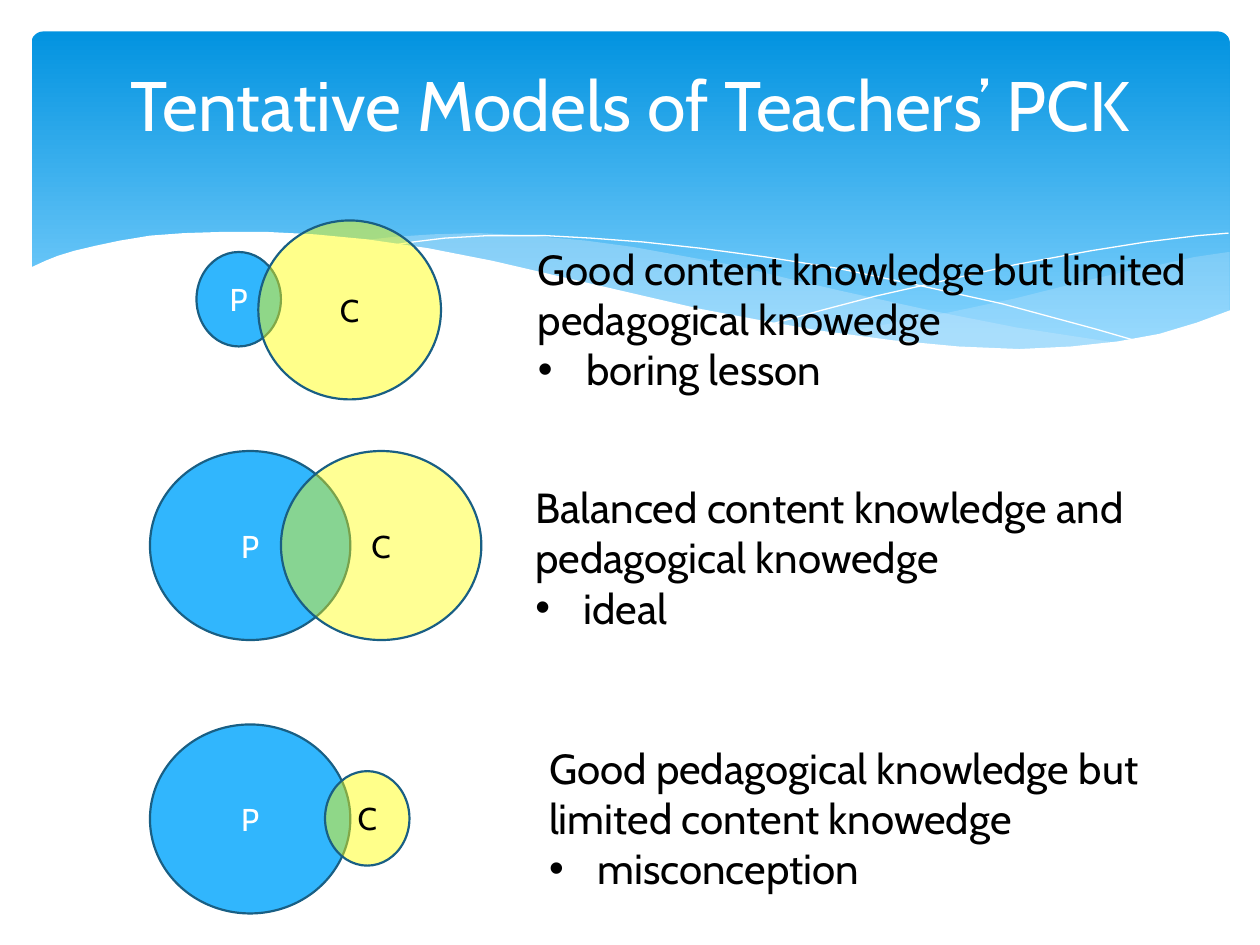
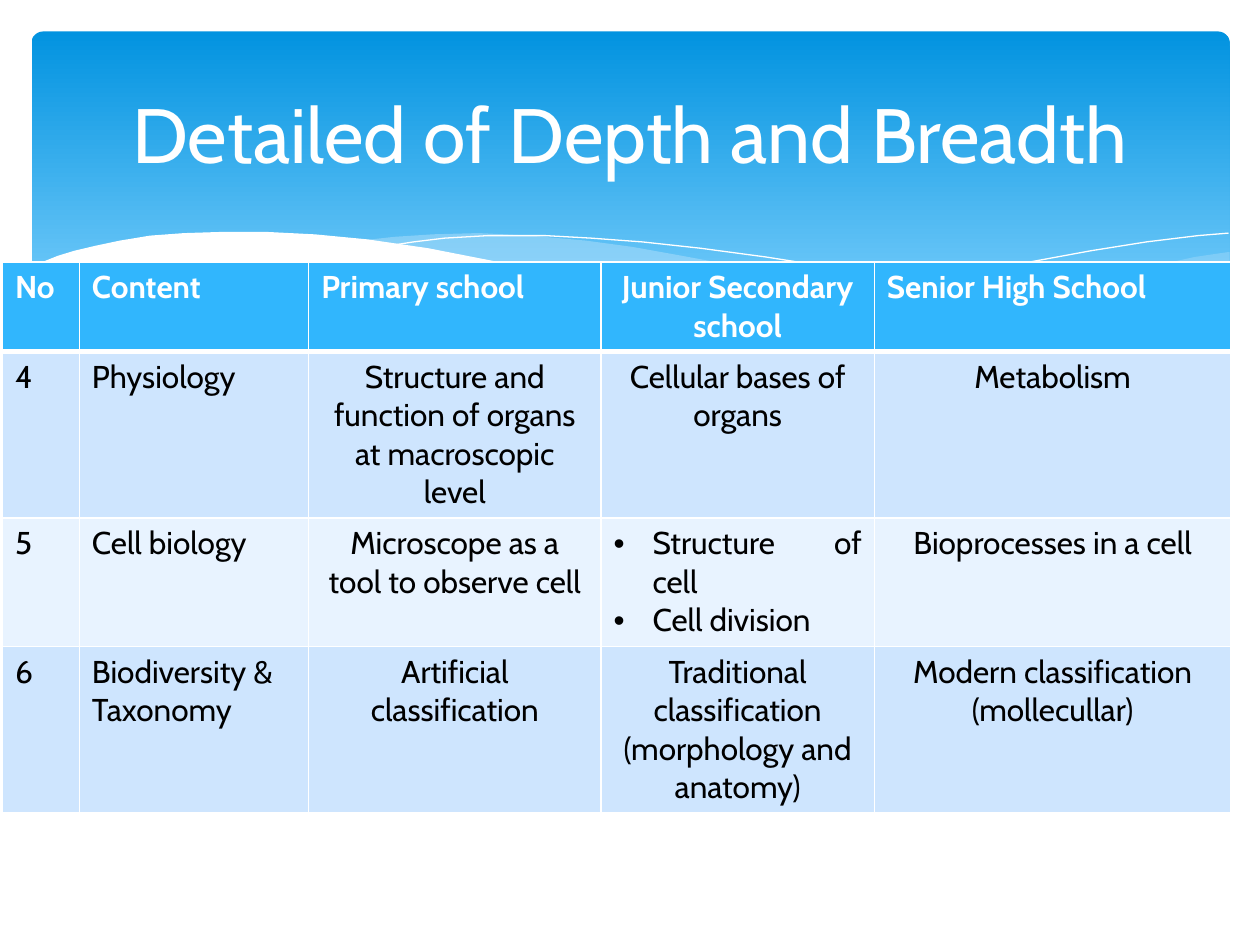
from dataclasses import dataclass

from lxml import etree
from pptx import Presentation, util as u
from pptx.dml.color import RGBColor
from pptx.enum import shapes, text
from pptx.oxml.ns import qn


@dataclass(frozen=True)
class Theme:
    font: str = "Cabin"
    white: str = "FFFFFF"
    black: str = "000000"
    band_top: str = "0293E0"
    band_bottom: str = "83D3FE"
    wave: str = "C6E7FC"
    blue: str = "31B6FD"
    outline: str = "195F84"
    yellow: str = "FFFF00"
    row_dark: str = "CEE5FE"
    row_light: str = "E8F3FF"
    body: int = 24
    label: int = 18


theme = Theme()
LEFT, CENTER, JUSTIFY = text.PP_ALIGN.LEFT, text.PP_ALIGN.CENTER, text.PP_ALIGN.JUSTIFY
BULLET = "•"


def paint(shape, fill=None, alpha=100, line=None, line_width=0):
    """Set fill, opacity in percent and outline, without a shadow."""
    shape.shadow.inherit = False
    if fill:
        shape.fill.solid()
        shape.fill.fore_color.rgb = RGBColor.from_string(fill)
        color = shape.element.spPr.find(qn("a:solidFill"))[0]
        if alpha < 100:
            etree.SubElement(color, qn("a:alpha")).set("val", str(alpha * 1000))
    else:
        shape.fill.background()
    if line:
        shape.line.color.rgb = RGBColor.from_string(line)
        shape.line.width = u.Pt(line_width)
    else:
        shape.line.fill.background()


def write(text_frame, wording, size, color, align=LEFT, bold=False):
    """Write one paragraph per line; lines that start with a bullet get a real one."""
    text_frame.text = wording.replace(BULLET, "")
    for line, paragraph in zip(wording.split("\n"), text_frame.paragraphs):
        paragraph.alignment = align
        if line.startswith(BULLET):
            properties = paragraph.runs[0].font and paragraph._p.get_or_add_pPr()
            properties.set("marL", str(u.Inches(0.31)))
            properties.set("indent", str(u.Inches(-0.31)))
            etree.SubElement(properties, qn("a:buFont")).set("typeface", "Arial")
            etree.SubElement(properties, qn("a:buChar")).set("char", BULLET)
        for run in paragraph.runs:
            run.font.name = theme.font
            run.font.size = u.Pt(size)
            run.font.bold = bold
            run.font.color.rgb = RGBColor.from_string(color)


# Slide size and a grid of 1000 columns by 750 rows
presentation = Presentation()
presentation.slide_width, presentation.slide_height = u.Inches(10), u.Inches(7.5)
unit = presentation.slide_width // 1000
layout = presentation.slide_layouts[5]

# Titles: wording, top, height, size
titles = [
    ("Tentative Models of Teachers’ PCK", 42, 81, 40),
    ("Detailed of Depth and Breadth", 37, 137, 44),
]
slides = []
for wording, top, height, size in titles:
    slide = presentation.slides.add_slide(layout)
    title = slide.shapes.title
    title.left, title.top, title.width, title.height = (
        unit * n for n in (50, top, 900, height))
    title.text_frame.vertical_anchor = text.MSO_ANCHOR.MIDDLE
    write(title.text_frame, wording, size, theme.white, CENTER)
    slides.append(slide)
models_slide, depth_slide = slides

# Shared header: gradient band
band = models_slide.shapes.add_shape(
    shapes.MSO_SHAPE.ROUNDED_RECTANGLE, *(unit * n for n in (25, 25, 951, 270)))
band.adjustments[0] = 0.034
paint(band)
band.fill.gradient()
band.fill.gradient_angle = 270
for stop, color, position in zip(
        band.fill.gradient_stops, (theme.band_top, theme.band_bottom), (0, 0.9)):
    stop.color.rgb = RGBColor.from_string(color)
    stop.position = position

# Shared header: waves as points on the grid, with closed flag and paint
right_wave = [
    (975, 200), (948, 204), (921, 210), (891, 216), (861, 223), (805, 237),
    (753, 248), (706, 257), (661, 265), (691, 269), (719, 272), (757, 276),
    (803, 278), (844, 277), (881, 273), (913, 267), (942, 259), (976, 247),
    (976, 200)]
middle_wave = [
    (893, 273), (866, 269), (807, 260), (741, 247), (668, 231), (629, 222),
    (584, 211), (541, 203), (502, 196), (465, 191), (420, 187), (380, 185),
    (344, 186), (313, 188), (286, 191), (323, 196), (362, 203), (404, 211),
    (449, 222), (530, 240), (601, 255), (665, 266), (722, 274), (761, 277),
    (807, 278), (848, 277), (876, 275)]
long_line = [
    (309, 195), (328, 192), (353, 189), (387, 187), (433, 187), (469, 189),
    (510, 192), (556, 197), (608, 204), (665, 213), (727, 226), (795, 241),
    (869, 261), (907, 272)]
short_line = [
    (613, 257), (653, 246), (695, 235), (748, 223), (806, 210), (866, 199),
    (910, 192), (951, 187), (975, 185)]
white_wave = [
    (977, 246), (950, 256), (920, 265), (887, 271), (850, 275), (809, 277),
    (761, 275), (708, 270), (648, 262), (603, 254), (555, 245), (503, 233),
    (447, 220), (391, 207), (340, 197), (292, 190), (250, 186), (211, 184),
    (177, 184), (146, 185), (119, 187), (95, 191), (76, 195), (59, 199),
    (46, 203), (36, 207), (23, 213), (23, 329), (977, 329)]
waves = [
    (right_wave, True, dict(fill=theme.wave, alpha=29)),
    (middle_wave, True, dict(fill=theme.wave, alpha=40)),
    (long_line, False, dict(line=theme.white)),
    (short_line, False, dict(line=theme.white)),
    (white_wave, True, dict(fill=theme.white)),
]
header = [band]
for points, closed, look in waves:
    builder = models_slide.shapes.build_freeform(*points[0], scale=unit)
    builder.add_line_segments(points[1:], close=closed)
    wave = builder.convert_to_shape()
    paint(wave, **look)
    header.append(wave)

# Move the header to the layout, behind its placeholders
for order, part in enumerate(header):
    part.element.find(".//" + qn("p:cNvPr")).set("id", str(100 + order))
    layout.shapes.element.insert(2 + order, part.element)

# Models: pedagogy circle, content circle, opacity of content, description
models = [
    ((156, 200, 67, 75), (205, 175, 145, 142), 46, (417, 188, 551, 131),
     "Good content knowledge but limited\npedagogical knowedge\n• boring lesson"),
    ((119, 358, 159, 150), (223, 358, 159, 150), 42, (415, 377, 503, 131),
     "Balanced content knowledge and\npedagogical knowedge\n• ideal"),
    ((119, 575, 159, 150), (258, 612, 67, 75), 46, (426, 584, 507, 131),
     "Good pedagogical knowledge but\nlimited content knowedge\n• misconception"),
]
for pedagogy, content, opacity, description_box, description in models:
    for letter, box, fill, alpha, color in (
            ("P", pedagogy, theme.blue, 100, theme.white),
            ("C", content, theme.yellow, opacity, theme.black)):
        circle = models_slide.shapes.add_shape(
            shapes.MSO_SHAPE.OVAL, *(unit * n for n in box))
        paint(circle, fill, alpha, theme.outline, 1.25)
        circle.text_frame.vertical_anchor = text.MSO_ANCHOR.MIDDLE
        write(circle.text_frame, letter, theme.label, color, CENTER)
    note = models_slide.shapes.add_textbox(*(unit * n for n in description_box))
    note.text_frame.word_wrap = False
    note.text_frame.auto_size = text.MSO_AUTO_SIZE.SHAPE_TO_FIT_TEXT
    write(note.text_frame, description, theme.body, theme.black)

# Depth and breadth table
content_rows = [
    ("No", "Content", "Primary school", "Junior Secondary school", "Senior High School"),
    ("4", "Physiology", "Structure and function of organs at macroscopic level",
     "Cellular bases of organs", "Metabolism"),
    ("5", "Cell biology", "Microscope as a tool to observe cell",
     "•Structure of cell\n•Cell division", "Bioprocesses in a cell"),
    ("6", "Biodiversity & Taxonomy", "Artificial classification",
     "Traditional classification (morphology and anatomy)",
     "Modern classification (mollecullar)"),
]
column_widths = (61, 182, 232, 217, 283)
row_heights = (70, 132, 102, 132)
frame = depth_slide.shapes.add_table(
    len(row_heights), len(column_widths),
    *(unit * n for n in (2, 208, sum(column_widths), sum(row_heights))))
table = frame.table
for column, width in zip(table.columns, column_widths):
    column.width = unit * width
for row, height in zip(table.rows, row_heights):
    row.height = unit * height

for index, (cell, element) in enumerate(zip(table.iter_cells(), frame.element.iter(qn("a:tc")))):
    row, column = divmod(index, len(column_widths))
    wording = content_rows[row][column]
    is_header = row == 0
    if wording.startswith(BULLET):
        align = JUSTIFY
    elif column == 3 or (column > 1 and not is_header):
        align = CENTER
    else:
        align = LEFT
    write(cell.text_frame, wording, theme.label,
          theme.white if is_header else theme.black, align, is_header)

    # White rules, thicker under the header row
    thick_side = {0: "B", 1: "T"}.get(row)
    for side in "LRTB":
        border = etree.SubElement(element.get_or_add_tcPr(), qn("a:ln" + side))
        border.set("w", str(u.Pt(3 if side == thick_side else 1)))
        solid = etree.SubElement(border, qn("a:solidFill"))
        etree.SubElement(solid, qn("a:srgbClr")).set("val", theme.white)
    cell.fill.solid()
    cell.fill.fore_color.rgb = RGBColor.from_string(
        theme.blue if is_header else theme.row_dark if row % 2 else theme.row_light)

presentation.save("out.pptx")
